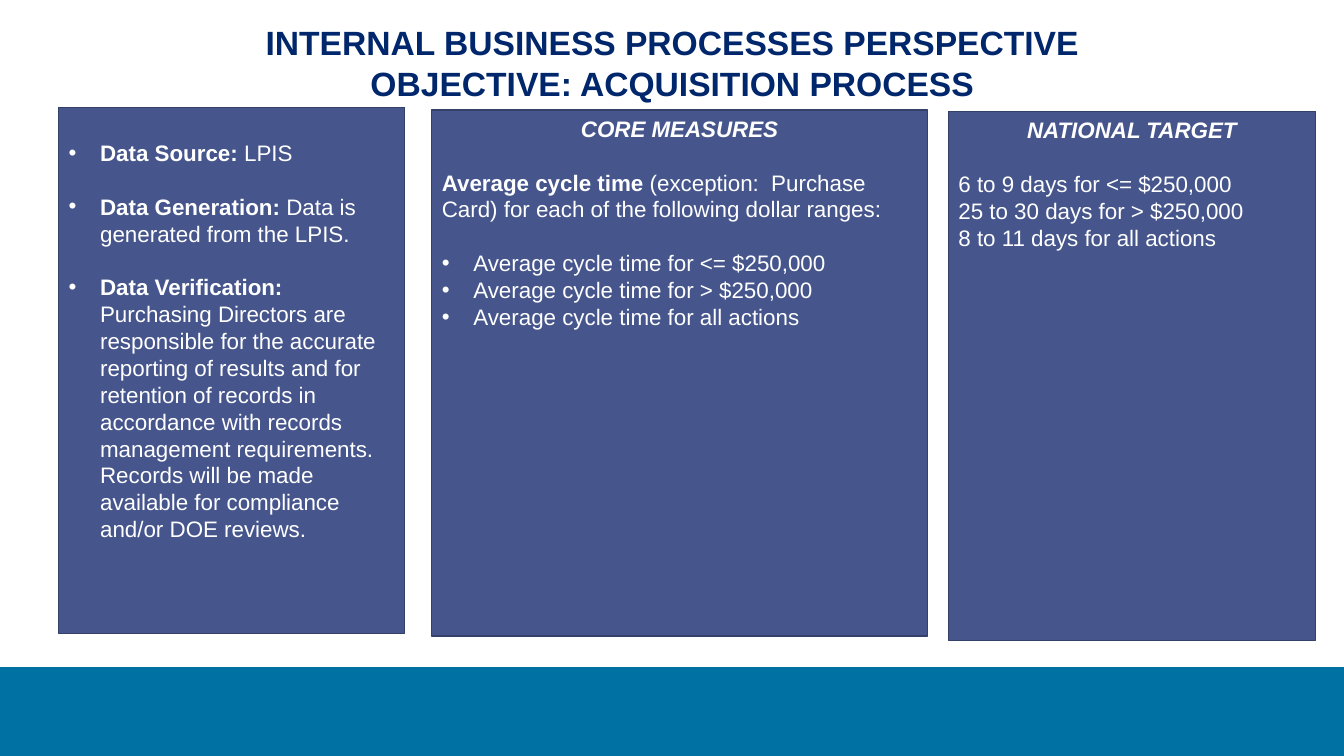
from pptx import Presentation
from pptx.dml.color import RGBColor as RGB
from pptx.enum.shapes import MSO_SHAPE as SHAPE
from pptx.enum.text import MSO_ANCHOR as ANCHOR, MSO_AUTO_SIZE as FIT, PP_ALIGN as ALIGN
from pptx.oxml.ns import qn
from pptx.util import Pt
from lxml.etree import SubElement

COLORS = {"band": "0071A3", "title": "00266C", "panel": "46568C", "edge": "344068", "text": "FFFFFF"}
FONT = "Arial"
W, H = 960, 540
BAND_TOP = 476.5
LINE = 19.2
INDENT = 22.5
INSET_X, INSET_Y = 7.2, 3.6

TITLE = {
    "box": (165.6, 11.5, 629.3, 65.5),
    "lines": ["INTERNAL BUSINESS PROCESSES PERSPECTIVE", "OBJECTIVE: ACQUISITION PROCESS"],
    "size": 24,
    "spacing": 29.3,
}

# kind, bold lead, plain rest, gap above in lines
PANELS = [
    {"box": (41.8, 76.6, 247.3, 375.8), "lead_lines": 1, "paras": [
        ("bullet", "Data Source: ", "LPIS", 0),
        ("bullet", "Data Generation: ", "Data is generated from the LPIS.", 1),
        ("bullet", "Data Verification: ",
         "Purchasing Directors are responsible for the accurate reporting of results and for "
         "retention of records in accordance with records management requirements. Records will "
         "be made available for compliance and/or DOE reviews.", 1),
    ]},
    {"box": (308.4, 78.5, 354.2, 375.8), "lead_lines": 0, "paras": [
        ("heading", "CORE MEASURES", "", 0),
        ("plain", "Average cycle time ", "(exception:  Purchase", 1),
        ("plain", "", "Card) for each of the following dollar ranges:", 0),
        ("bullet", "", "Average cycle time for <= $250,000", 1),
        ("bullet", "", "Average cycle time for > $250,000", 0),
        ("bullet", "", "Average cycle time for all actions", 0),
    ]},
    {"box": (677.4, 79.5, 262.3, 378), "lead_lines": 0, "paras": [
        ("heading", "NATIONAL TARGET", "", 0),
        ("plain", "", "6 to 9 days for <= $250,000", 1),
        ("plain", "", "25 to 30 days for > $250,000", 0),
        ("plain", "", "8 to 11 days for all actions", 0),
    ]},
]


def assign(obj, values):
    for name, value in values.items():
        setattr(obj, name, value)


def place(sp, box):
    assign(sp, dict(zip(("left", "top", "width", "height"), map(Pt, box))))


def set_frame(tf, anchor, top=INSET_Y):
    assign(tf, {"word_wrap": True, "auto_size": FIT.NONE, "vertical_anchor": anchor,
                "margin_left": Pt(INSET_X), "margin_right": Pt(INSET_X),
                "margin_top": Pt(top), "margin_bottom": Pt(INSET_Y)})


def add_run(p, text, size, color, bold, italic=False):
    r = p.add_run()
    r.text = text
    assign(r.font, {"name": FONT, "size": Pt(size), "bold": bold, "italic": italic})
    r.font.color.rgb = RGB.from_string(COLORS[color])


def paragraphs(tf, items):
    for i, item in enumerate(items):
        yield (tf.add_paragraph() if i else tf.paragraphs[0]), item


def set_bullet(p, on):
    pPr = p._p.get_or_add_pPr()
    indent = Pt(INDENT) if on else 0
    pPr.set("marL", str(indent))
    pPr.set("indent", str(-indent))
    if on:
        SubElement(pPr, qn("a:buFont")).set("typeface", FONT)
        SubElement(pPr, qn("a:buChar")).set("char", "•")
    else:
        SubElement(pPr, qn("a:buNone"))


def paint(sp, fill, edge=None):
    sp.fill.solid()
    sp.fill.fore_color.rgb = RGB.from_string(COLORS[fill])
    if edge:
        sp.line.color.rgb = RGB.from_string(COLORS[edge])
        sp.line.width = Pt(1)
    else:
        sp.line.fill.background()


def fill_title(sp):
    place(sp, TITLE["box"])
    set_frame(sp.text_frame, ANCHOR.TOP)
    for p, text in paragraphs(sp.text_frame, TITLE["lines"]):
        assign(p, {"alignment": ALIGN.CENTER, "line_spacing": Pt(TITLE["spacing"])})
        add_run(p, text, TITLE["size"], "title", True)


def fill_panel(sp, panel):
    place(sp, panel["box"])
    paint(sp, "panel", "edge")
    set_frame(sp.text_frame, ANCHOR.TOP, INSET_Y + panel["lead_lines"] * LINE)
    for p, (kind, lead, rest, gap) in paragraphs(sp.text_frame, panel["paras"]):
        heading = kind == "heading"
        set_bullet(p, kind == "bullet")
        assign(p, {"alignment": ALIGN.CENTER if heading else ALIGN.LEFT,
                   "line_spacing": Pt(LINE), "space_before": Pt(gap * LINE), "space_after": Pt(0)})
        for text, bold in ((lead, True), (rest, False)):
            if text:
                add_run(p, text, 16, "text", bold, heading)


def main():
    prs = Presentation()
    assign(prs, {"slide_width": Pt(W), "slide_height": Pt(H)})
    s = prs.slides.add_slide(prs.slide_layouts.get_by_name("Comparison"))
    band = s.shapes.add_shape(SHAPE.RECTANGLE, 0, Pt(BAND_TOP), Pt(W), Pt(H - BAND_TOP))
    band.shadow.inherit = False
    paint(band, "band")
    fill_title(s.shapes.title)
    bodies = [sp for sp in s.placeholders if sp.placeholder_format.idx]
    for sp, panel in zip(bodies, PANELS):
        fill_panel(sp, panel)
    for sp in bodies[len(PANELS):]:
        sp._element.getparent().remove(sp._element)
    prs.save("out.pptx")


if __name__ == "__main__":
    main()
